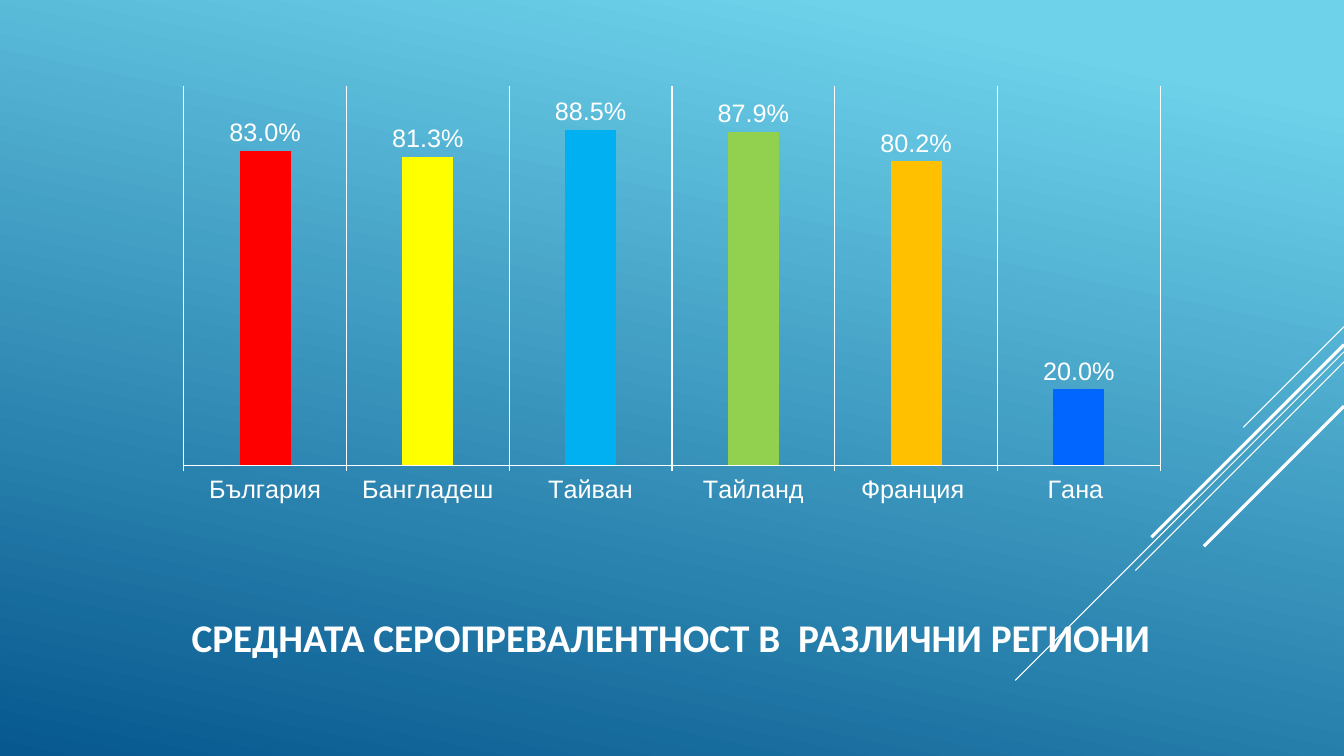
from pptx import Presentation
from pptx.chart.data import CategoryChartData
from pptx.dml.color import RGBColor
from pptx.enum.chart import XL_CHART_TYPE, XL_LABEL_POSITION, XL_TICK_MARK
from pptx.enum.shapes import MSO_CONNECTOR
from pptx.enum.text import MSO_ANCHOR, MSO_AUTO_SIZE, PP_ALIGN
from pptx.oxml.ns import qn
from pptx.util import Inches, Pt
from lxml import etree

COLUMN = XL_CHART_TYPE.COLUMN_CLUSTERED
OUTSIDE_END = XL_LABEL_POSITION.OUTSIDE_END
TICK_OUT = XL_TICK_MARK.OUTSIDE
TICK_NONE = XL_TICK_MARK.NONE
STRAIGHT = MSO_CONNECTOR.STRAIGHT
MIDDLE = MSO_ANCHOR.MIDDLE
NO_AUTOFIT = MSO_AUTO_SIZE.NONE
LEFT = PP_ALIGN.LEFT

WHITE = RGBColor(0xFF, 0xFF, 0xFF)
SKY = RGBColor(0x6E, 0xD2, 0xEB)
DEEP = RGBColor(0x06, 0x58, 0x8E)
NAVY = RGBColor(0x05, 0x2F, 0x61)
RED = RGBColor(0xFF, 0x00, 0x00)
YELLOW = RGBColor(0xFF, 0xFF, 0x00)
CYAN = RGBColor(0x00, 0xB0, 0xF0)
GREEN = RGBColor(0x92, 0xD0, 0x50)
AMBER = RGBColor(0xFF, 0xC0, 0x00)
BLUE = RGBColor(0x00, 0x66, 0xFF)

SLIDE_W, SLIDE_H = 13.33, 7.5

REGIONS = [
    ("България", 0.83, RED),
    ("Бангладеш", 0.813, YELLOW),
    ("Тайван", 0.885, CYAN),
    ("Тайланд", 0.879, GREEN),
    ("Франция ", 0.802, AMBER),
    ("Гана ", 0.2, BLUE),
]
DIAGONALS = [
    (3.24, 1.0, 0.75),
    (3.49, 3.26, 0.75),
    (3.59, 2.07, 0.75),
    (3.42, 1.91, 2.25),
    (4.03, 1.39, 2.25),
]


def paint_background(s):
    fill = s.background.fill
    fill.gradient()
    fill.gradient_angle = 360 - 102
    for stop, (position, color) in zip(fill.gradient_stops, [(0.1, SKY), (1, DEEP)]):
        stop.position = position
        stop.color.rgb = color


def add_diagonals(s, right):
    for top, reach, weight in DIAGONALS:
        line = s.shapes.add_connector(
            STRAIGHT, Inches(right), Inches(top), Inches(right - reach), Inches(top + reach))
        line.line.color.rgb = WHITE
        line.line.width = Pt(weight)
        etree.SubElement(line.element.spPr, qn("a:effectLst"))


def place_title(s, left, top, width, height):
    title = s.shapes.title
    title.element.getparent().append(title.element)
    title.left, title.top = Inches(left), Inches(top)
    title.width, title.height = Inches(width), Inches(height)
    tf = title.text_frame
    tf.word_wrap = True
    tf.auto_size = NO_AUTOFIT
    tf.vertical_anchor = MIDDLE
    p = tf.paragraphs[0]
    p.alignment = LEFT
    r = p.add_run()
    r.text = "СРЕДНАТА СЕРОПРЕВАЛЕНТНОСТ В  РАЗЛИЧНИ РЕГИОНИ"
    r.font.name = "Calibri"
    r.font.size = Pt(28)
    r.font.bold = True
    r.font.color.rgb = WHITE


def style_font(font):
    font.name = "Arial"
    font.size = Pt(18)
    font.color.rgb = WHITE


def style_line(line):
    line.color.rgb = WHITE
    line.width = Pt(0.75)


def add_region_chart(s, left, top, width, height):
    data = CategoryChartData(number_format="0.0%")
    data.categories = [name for name, _, _ in REGIONS]
    data.add_series("Series 1", [value for _, value, _ in REGIONS])
    chart = s.shapes.add_chart(
        COLUMN, Inches(left), Inches(top), Inches(width), Inches(height), data).chart
    chart.has_legend = False
    chart.has_title = False
    style_font(chart.font)

    cat_axis = chart.category_axis
    cat_axis.major_tick_mark = TICK_OUT
    cat_axis.minor_tick_mark = TICK_NONE
    cat_axis.has_major_gridlines = True
    style_line(cat_axis.major_gridlines.format.line)
    style_line(cat_axis.format.line)
    style_font(cat_axis.tick_labels.font)

    val_axis = chart.value_axis
    val_axis.minimum_scale = 0
    val_axis.maximum_scale = 1
    val_axis.has_major_gridlines = False
    val_axis.tick_labels.number_format = "0.0%"
    val_axis.tick_labels.number_format_is_linked = False
    val_axis.visible = False

    plot = chart.plots[0]
    plot.gap_width = 219
    plot.overlap = -27
    plot.vary_by_categories = False

    series = plot.series[0]
    series.invert_if_negative = False
    series.format.fill.solid()
    series.format.fill.fore_color.rgb = NAVY
    for i, (_, _, color) in enumerate(REGIONS):
        fill = series.points[i].format.fill
        fill.solid()
        fill.fore_color.rgb = color

    labels = series.data_labels
    labels.show_value = True
    labels.position = OUTSIDE_END
    labels.number_format = "0.0%"
    labels.number_format_is_linked = False
    style_font(labels.font)


def main():
    prs = Presentation()
    prs.slide_width, prs.slide_height = Inches(SLIDE_W), Inches(SLIDE_H)
    s = prs.slides.add_slide(prs.slide_layouts[5])
    paint_background(s)
    add_diagonals(s, SLIDE_W)
    place_title(s, 1.8, 5.49, 10.87, 1.65)
    add_region_chart(s, 1.62, 0.77, 10.09, 4.31)
    prs.save("out.pptx")


if __name__ == "__main__":
    main()
